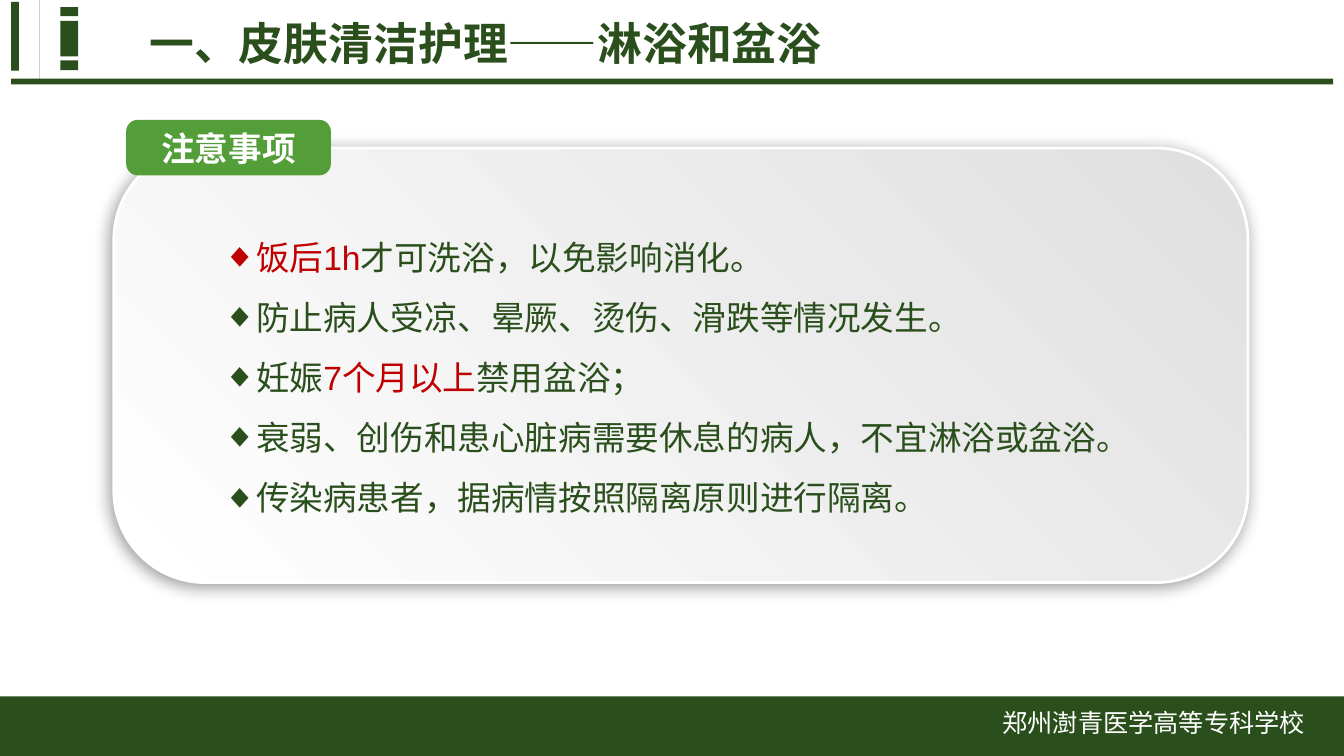
import math

from lxml import etree
from pptx import Presentation
from pptx.dml.color import RGBColor
from pptx.enum.lang import MSO_LANGUAGE_ID
from pptx.enum.shapes import MSO_SHAPE
from pptx.enum.text import MSO_ANCHOR, MSO_AUTO_SIZE, PP_ALIGN
from pptx.oxml.ns import qn
from pptx.util import Cm, Pt

RECT, ROUNDED = MSO_SHAPE.RECTANGLE, MSO_SHAPE.ROUNDED_RECTANGLE
LEFT, CENTER = PP_ALIGN.LEFT, PP_ALIGN.CENTER
TOP, MIDDLE = MSO_ANCHOR.TOP, MSO_ANCHOR.MIDDLE
CHINESE = MSO_LANGUAGE_ID.SIMPLIFIED_CHINESE
DARK_GREEN = RGBColor(0x2A, 0x4F, 0x1C)
GREEN = RGBColor(0x54, 0x9E, 0x39)
RED = RGBColor(0xC0, 0x00, 0x00)
GRAY = RGBColor(0xE0, 0xE0, 0xE0)
BLACK = RGBColor(0x00, 0x00, 0x00)
WHITE = RGBColor(0xFF, 0xFF, 0xFF)
CJK = "Noto Sans CJK SC"


def add_run(p, text, size=24, color=DARK_GREEN, font=CJK, bold=False):
    r = p.add_run()
    r.text = text
    r.font.size, r.font.bold, r.font.name = Pt(size), bold, font
    r.font.color.rgb = color
    r.font.language_id = CHINESE
    etree.SubElement(r.font._element, qn("a:ea"), typeface=CJK)
    return r


def rect_points(x, y, w, h):
    return [(x, y), (x + w, y), (x + w, y + h), (x, y + h)]


def circle_points(cx, cy, radius, n=16):
    angles = [2 * math.pi * i / n for i in range(n)]
    return [(cx + radius * math.cos(a), cy + radius * math.sin(a)) for a in angles]


class SlideBuilder:
    def __init__(self, prs):
        self.s = prs.slides.add_slide(prs.slide_layouts[1])

    def shape(self, kind, box, color, radius=None):
        sp = self.s.shapes.add_shape(kind, *map(Cm, box))
        sp.shadow.inherit = False
        sp.fill.solid()
        sp.fill.fore_color.rgb = color
        sp.line.fill.background()
        if radius is not None:
            sp.adjustments[0] = radius
        return sp

    def outline(self, contours, color):
        start = contours[0][0]
        builder = self.s.shapes.build_freeform(*start, scale=Cm(1))
        builder.add_line_segments(contours[0][1:])
        for points in contours[1:]:
            builder.move_to(*points[0])
            builder.add_line_segments(points[1:])
        sp = builder.convert_to_shape()
        sp.shadow.inherit = False
        sp.fill.solid()
        sp.fill.fore_color.rgb = color
        sp.line.fill.background()

    def card(self, box, radius):
        sp = self.shape(ROUNDED, box, WHITE, radius)
        sp.fill.gradient()
        sp.fill.gradient_angle = 225
        for stop, color in zip(sp.fill.gradient_stops, (GRAY, WHITE)):
            stop.color.rgb = color
        sp.line.color.rgb = WHITE
        sp.line.width = Pt(2)
        effects = sp._element.spPr.find(qn("a:effectLst"))
        shadow = etree.SubElement(
            effects, qn("a:outerShdw"), blurRad=str(Pt(12)), dist=str(Pt(3)),
            dir=str(135 * 60000), algn="tr", rotWithShape="0")
        color = etree.SubElement(shadow, qn("a:srgbClr"), val=str(BLACK))
        etree.SubElement(color, qn("a:alpha"), val="40000")

    def text(self, sp, text, align=CENTER, **style):
        tf = sp.text_frame
        tf.word_wrap = True
        tf.auto_size = MSO_AUTO_SIZE.NONE
        tf.vertical_anchor = MIDDLE
        p = tf.paragraphs[0]
        p.alignment = align
        add_run(p, text, **style)
        return tf

    def textbox(self, box, text, **style):
        return self.text(self.s.shapes.add_textbox(*map(Cm, box)), text, **style)

    def placeholder(self, sp, box):
        sp.left, sp.top, sp.width, sp.height = map(Cm, box)
        self.s.shapes._spTree.append(sp._element)  # bring to front
        return sp

    def title(self, box, text, **style):
        self.text(self.placeholder(self.s.shapes.title, box), text, LEFT, **style)

    def bullets(self, box, items):
        tf = self.placeholder(self.s.placeholders[1], box).text_frame
        tf.word_wrap = True
        tf.auto_size = MSO_AUTO_SIZE.NONE
        tf.vertical_anchor = TOP
        for i, runs in enumerate(items):
            p = tf.add_paragraph() if i else tf.paragraphs[0]
            pPr = p._p.get_or_add_pPr()
            pPr.set("marL", str(Cm(0.79)))
            pPr.set("indent", str(-Cm(0.79)))
            etree.SubElement(pPr, qn("a:buFont"), typeface="Arial")
            etree.SubElement(pPr, qn("a:buChar"), char="◆")
            p.alignment = LEFT
            p.space_before = Pt(0)
            p.line_spacing = Pt(43)
            for text, color in runs:
                add_run(p, text, color=color, font="Arial")


def main():
    prs = Presentation()
    prs.slide_width, prs.slide_height = Cm(33.87), Cm(19.05)
    slide = SlideBuilder(prs)

    # Header rule, books icon and footer band
    for box in [(0.28, 1.98, 33.32, 0.15), (0.28, 0.05, 0.2, 1.73),
                (1.52, 1.52, 0.45, 0.25), (1.52, 0.53, 0.45, 0.89),
                (1.52, 0.18, 0.45, 0.23), (0, 17.55, 33.87, 1.5)]:
        slide.shape(RECT, box, DARK_GREEN)
    slide.outline([rect_points(1.02, 0.48, 0.4, 1.3),
                   circle_points(1.22, 0.65, 0.05),
                   circle_points(1.22, 1.6, 0.05)], DARK_GREEN)
    slide.outline([rect_points(0.56, 0.23, 0.36, 1.55),
                   rect_points(0.66, 0.36, 0.15, 0.18)], DARK_GREEN)

    # Title and school name
    slide.title((3.51, 0.28, 27.3, 1.6), "一、皮肤清洁护理——淋浴和盆浴",
                size=32, bold=True)
    slide.textbox((24.26, 17.63, 9.63, 1.17), "郑州澍青医学高等专科学校",
                  size=18, color=WHITE)

    # Card with its badge
    slide.card((2.87, 3.73, 28.58, 10.95), 0.21)
    badge = slide.shape(ROUNDED, (3.18, 3.02, 5.16, 1.4), GREEN, 0.21)
    tf = slide.text(badge, "注意事项", color=WHITE, font="Arial Narrow", bold=True)
    tf.margin_left = tf.margin_right = tf.margin_top = tf.margin_bottom = 0

    # Precautions
    slide.bullets((5.36, 5.33, 24.97, 9.07), [
        [("饭后1h", RED), ("才可洗浴，以免影响消化。", DARK_GREEN)],
        [("防止病人受凉、晕厥、烫伤、滑跌等情况发生。", DARK_GREEN)],
        [("妊娠", DARK_GREEN), ("7个月以上", RED), ("禁用盆浴；", DARK_GREEN)],
        [("衰弱、创伤和患心脏病需要休息的病人，不宜淋浴或盆浴。", DARK_GREEN)],
        [("传染病患者，据病情按照隔离原则进行隔离。", DARK_GREEN)],
    ])

    prs.save("out.pptx")


if __name__ == "__main__":
    main()
